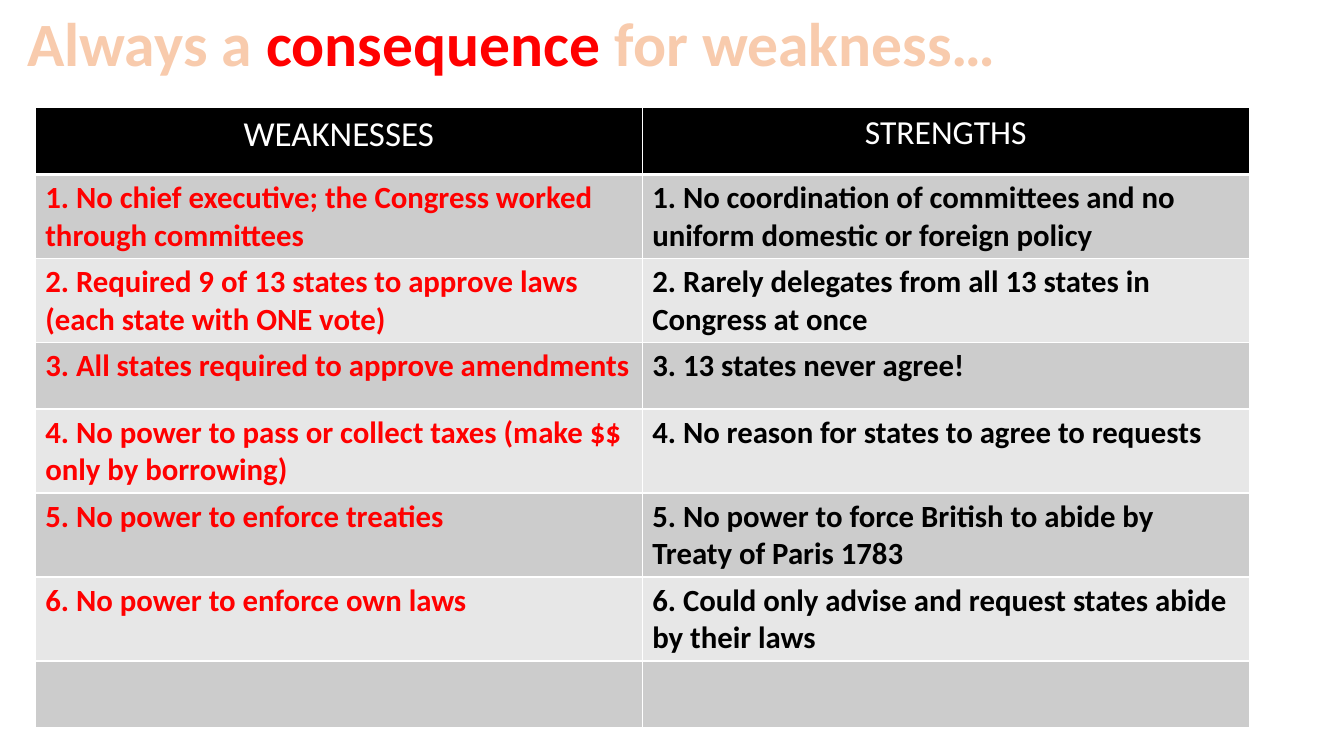
from lxml.etree import SubElement
from pptx import Presentation
from pptx.dml.color import RGBColor
from pptx.enum.text import MSO_ANCHOR, MSO_AUTO_SIZE, PP_ALIGN
from pptx.oxml import parse_xml
from pptx.oxml.ns import nsdecls, qn
from pptx.util import Inches, Pt

COLORS = {
    "peach": "F8CBAD",
    "orange": "ED7D31",
    "red": "FF0000",
    "black": "000000",
    "white": "FFFFFF",
    "dark_band": "CCCCCC",
    "light_band": "E7E7E7",
}
FONT = "Calibri"
TITLE_RUNS = [("Always a ", "peach"), ("consequence", "red"), (" for weakness…", "peach")]
HEADINGS = [("WEAKNESSES", 25), ("STRENGTHS", 24)]
ROWS = [
    ("1. No chief executive; the Congress worked through committees",
     "1. No coordination of committees and no uniform domestic or foreign policy"),
    ("2. Required 9 of 13 states to approve laws (each state with ONE vote)",
     "2. Rarely delegates from all 13 states in Congress at once"),
    ("3. All states required to approve amendments",
     "3. 13 states never agree!"),
    ("4. No power to pass or collect taxes (make $$ only by borrowing)",
     "4. No reason for states to agree to requests"),
    ("5. No power to enforce treaties",
     "5. No power to force British to abide by Treaty of Paris 1783"),
    ("6. No power to enforce own laws",
     "6. Could only advise and request states abide by their laws"),
    ("", ""),
]


def rgb(name):
    return RGBColor.from_string(COLORS[name])


def format_font(font, size, color, bold):
    font.name = FONT
    font.size = Pt(size)
    font.bold = bold
    font.color.rgb = rgb(color)


def outline_run(run, color, width):
    outline = parse_xml(
        f'<a:ln {nsdecls("a")} w="{Pt(width)}"><a:solidFill>'
        f'<a:srgbClr val="{COLORS[color]}"/></a:solidFill></a:ln>')
    run.font._element.insert(0, outline)


def add_title(slide, left, top, width, height):
    title = slide.shapes.title
    title.left, title.top = Inches(left), Inches(top)
    title.width, title.height = Inches(width), Inches(height)
    frame = title.text_frame
    frame.word_wrap = False
    frame.auto_size = MSO_AUTO_SIZE.SHAPE_TO_FIT_TEXT
    frame.vertical_anchor = MSO_ANCHOR.TOP
    paragraph = frame.paragraphs[0]
    paragraph.alignment = PP_ALIGN.CENTER
    for text, color in TITLE_RUNS:
        run = paragraph.add_run()
        run.text = text
        format_font(run.font, 44, color, True)
        outline_run(run, "orange", 1.75)


def add_borders(cell, bottom_width):
    properties = cell._tc.get_or_add_tcPr()
    for side, width in (("L", 1), ("R", 1), ("T", 1), ("B", bottom_width)):
        line = SubElement(properties, qn(f"a:ln{side}"), w=str(Pt(width)))
        fill = SubElement(line, qn("a:solidFill"))
        SubElement(fill, qn("a:srgbClr"), val=COLORS["white"])


def fill_cell(cell, text, size, color, band, bold=True, bottom_width=1):
    add_borders(cell, bottom_width)
    cell.fill.solid()
    cell.fill.fore_color.rgb = rgb(band)
    if text:
        cell.text_frame.text = text
        format_font(cell.text_frame.paragraphs[0].runs[0].font, size, color, bold)


def add_comparison_table(slide, left, top, width, row_height):
    row_count = len(ROWS) + 1
    table = slide.shapes.add_table(
        row_count, len(HEADINGS), Inches(left), Inches(top),
        Inches(width), Inches(row_height * row_count)).table
    for row in table.rows:
        row.height = Inches(row_height)
    for column, (heading, size) in enumerate(HEADINGS):
        cell = table.cell(0, column)
        fill_cell(cell, heading, size, "white", "black", bold=False, bottom_width=3)
        cell.text_frame.paragraphs[0].alignment = PP_ALIGN.CENTER
    for index, texts in enumerate(ROWS, start=1):
        band = "dark_band" if index % 2 else "light_band"
        for column, (text, color) in enumerate(zip(texts, ("red", "black"))):
            fill_cell(table.cell(index, column), text, 22, color, band)


def main():
    presentation = Presentation()
    presentation.slide_width = Inches(13.33)
    presentation.slide_height = Inches(7.5)
    slide = presentation.slides.add_slide(presentation.slide_layouts[5])
    add_title(slide, 0.1, 0, 9.95, 0.84)
    add_comparison_table(slide, 0.35, 1.07, 12.04, 0.66)
    presentation.save("out.pptx")


if __name__ == "__main__":
    main()
